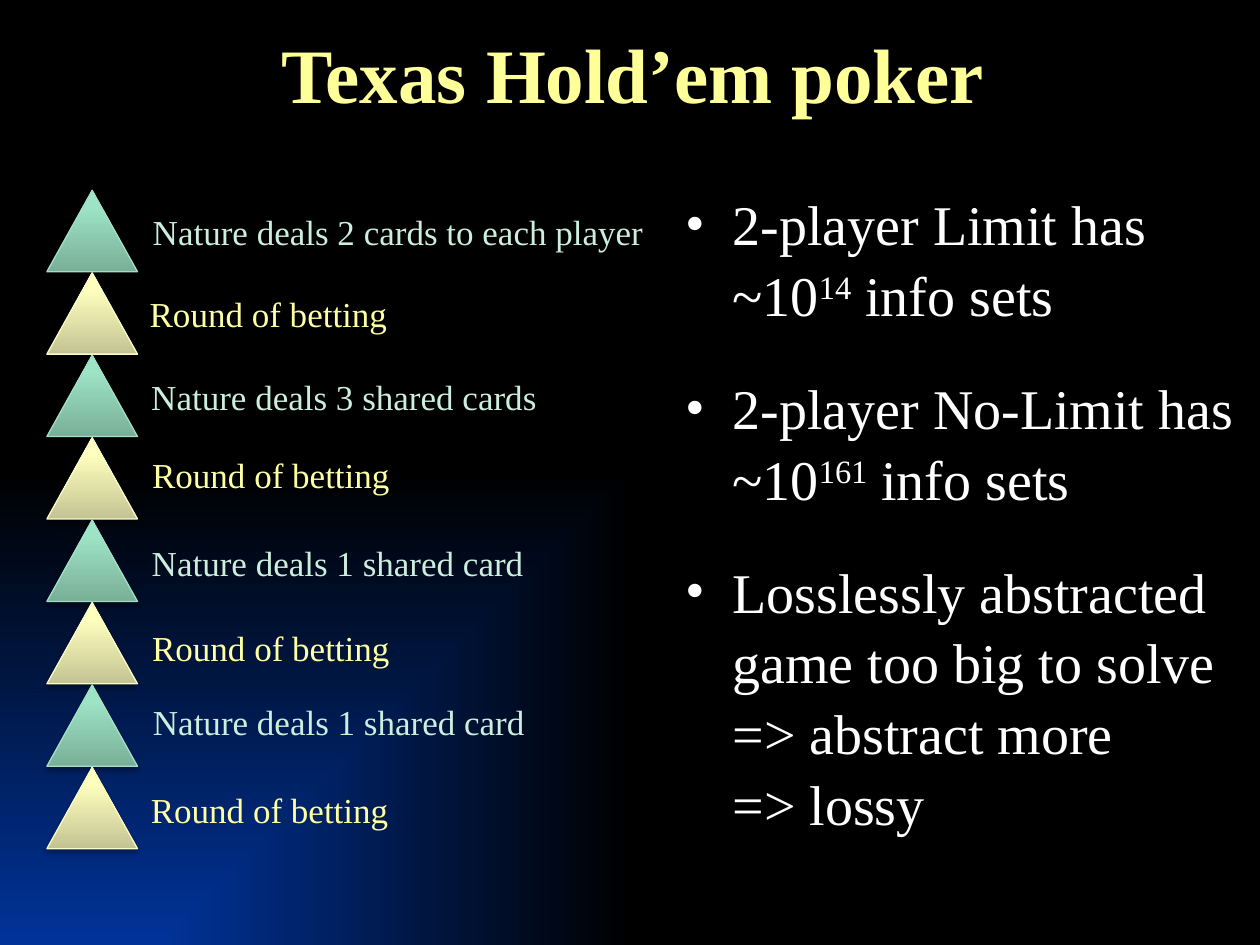
from dataclasses import dataclass

from lxml import etree
from pptx import Presentation
from pptx.dml.color import RGBColor
from pptx.enum import shapes, text
from pptx.oxml import ns
from pptx.util import Pt


@dataclass(frozen=True)
class Theme:
    font: str = "Times New Roman"
    title: str = "FFFF99"
    body: str = "FFFFFF"
    title_size: int = 44
    body_size: int = 32
    label_size: int = 20
    background: tuple = ((0, "003399"), (100, "000000"))


@dataclass(frozen=True)
class Move:
    label: str
    line: str
    stops: tuple


THEME = Theme()
NATURE = Move("CCEEDF", "A5DEC6", ((0, "79AF98"), (80, "9DE3C5"), (100, "9CE6C6")))
BETTING = Move("FFFFA3", "FBFBC6", ((0, "C4C493"), (80, "FEFEBE"), (100, "FFFFC0")))

# Game stages: text, then left, top and width of its label
BET = "Round of betting"
STAGES = [
    ("Nature deals 2 cards to each player", 79.2, 116.6, 296.6),
    (BET, 77.8, 163.4, 151.2),
    ("Nature deals 3 shared cards", 78.5, 211, 236.2),
    (BET, 79.2, 255.6, 151.2),
    ("Nature deals 1 shared card", 77.8, 306, 230.4),
    (BET, 79.2, 354.2, 151.2),
    ("Nature deals 1 shared card", 78.5, 396.7, 230.4),
    (BET, 78.5, 447.1, 151.2),
]

# Each bullet is a list of (text, is superscript); "\n" is a line break
BULLETS = [
    [("2-player Limit has ~10", False), ("14", True), (" info sets", False)],
    [("2-player No-Limit has ~10", False), ("161", True), (" info sets", False)],
    [("Losslessly abstracted game too big to solve => abstract more\n=> lossy", False)],
]


def add_xml(parent, tag, **attrs):
    return etree.SubElement(parent, ns.qn(tag), {k: str(v) for k, v in attrs.items()})


def add_colour(parent, colour):
    return add_xml(parent, "a:srgbClr", val=colour)


def set_gradient(fill, owner, stops):
    """Give the fill these stops; the caller adds the direction."""
    fill.gradient()
    grad = next(owner.iter(ns.qn("a:gradFill")))
    for child in list(grad):
        grad.remove(child)
    gs_list = add_xml(grad, "a:gsLst")
    for pos, colour in stops:
        add_colour(add_xml(gs_list, "a:gs", pos=pos * 1000), colour)
    return grad


def add_run(p, words, size, colour, bold=False):
    r = p.add_run()
    r.text = words
    r.font.name = THEME.font
    r.font.size = Pt(size)
    r.font.bold = bold
    r.font.color.rgb = RGBColor.from_string(colour)
    return r


def add_frame(s, box, wrap=True):
    tf = s.shapes.add_textbox(*map(Pt, box)).text_frame
    tf.word_wrap = wrap
    return tf


def paint_background(s):
    grad = set_gradient(s.background.fill, s.element, THEME.background)
    route = add_xml(grad, "a:path", **{"path": "rect"})
    add_xml(route, "a:fillToRect", t=100000, r=100000)


def add_title(s, box, words):
    tf = add_frame(s, box)
    tf.vertical_anchor = text.MSO_ANCHOR.MIDDLE
    p = tf.paragraphs[0]
    p.alignment = text.PP_ALIGN.CENTER
    add_run(p, words, THEME.title_size, THEME.title, bold=True)


def add_bullets(s, box, bullets):
    tf = add_frame(s, box)
    for i, parts in enumerate(bullets):
        p = tf.add_paragraph() if i else tf.paragraphs[0]
        p.line_spacing = 1.05
        p.space_before = Pt(6.4)
        p.space_after = Pt(18)
        pPr = p._p.get_or_add_pPr()
        pPr.set("marL", str(Pt(27)))
        pPr.set("indent", str(Pt(-27)))
        add_xml(pPr, "a:buFont", typeface=THEME.font)
        add_xml(pPr, "a:buChar", char="•")
        for words, raised in parts:
            for n, line in enumerate(words.split("\n")):
                if n:
                    p.add_line_break()
                r = add_run(p, line, THEME.body_size, THEME.body)
                if raised:
                    r.font._element.set("baseline", "30000")


def add_triangle(s, box, move):
    sp = s.shapes.add_shape(shapes.MSO_SHAPE.ISOSCELES_TRIANGLE, *map(Pt, box))
    grad = set_gradient(sp.fill, sp.element, move.stops)
    add_xml(grad, "a:lin", ang=270 * 60000, scaled=0)
    sp.line.color.rgb = RGBColor.from_string(move.line)
    sp.line.width = Pt(0.75)
    # Soft shadow below
    sp.shadow.inherit = False
    effects = next(sp.element.iter(ns.qn("a:effectLst")))
    shadow = add_xml(effects, "a:outerShdw", blurRad=Pt(3.1), dist=Pt(1.8),
                     dir=90 * 60000, rotWithShape=0)
    add_xml(add_colour(shadow, "000000"), "a:alpha", val=35000)


def add_game_tree(s, box, stages):
    left, top, width, height = box
    pitch = height / len(stages)
    moves = [(NATURE, BETTING)[i % 2] for i in range(len(stages))]
    for i, move in enumerate(moves):
        add_triangle(s, (left, top + i * pitch, width, pitch - 0.6), move)
    for (words, x, y, w), move in zip(stages, moves):
        p = add_frame(s, (x, y, w, 31.5), wrap=False).paragraphs[0]
        p.alignment = text.PP_ALIGN.CENTER
        add_run(p, words, THEME.label_size, move.label)


def main():
    prs = Presentation()
    prs.slide_width, prs.slide_height = Pt(720), Pt(540)
    s = prs.slides.add_slide(prs.slide_layouts[6])
    paint_background(s)
    add_title(s, (18, 12.2, 687.6, 59), "Texas Hold’em poker")
    add_bullets(s, (384.5, 103, 332, 403), BULLETS)
    add_game_tree(s, (26.8, 108.8, 51.8, 376.8), STAGES)
    prs.save("out.pptx")


if __name__ == "__main__":
    main()
